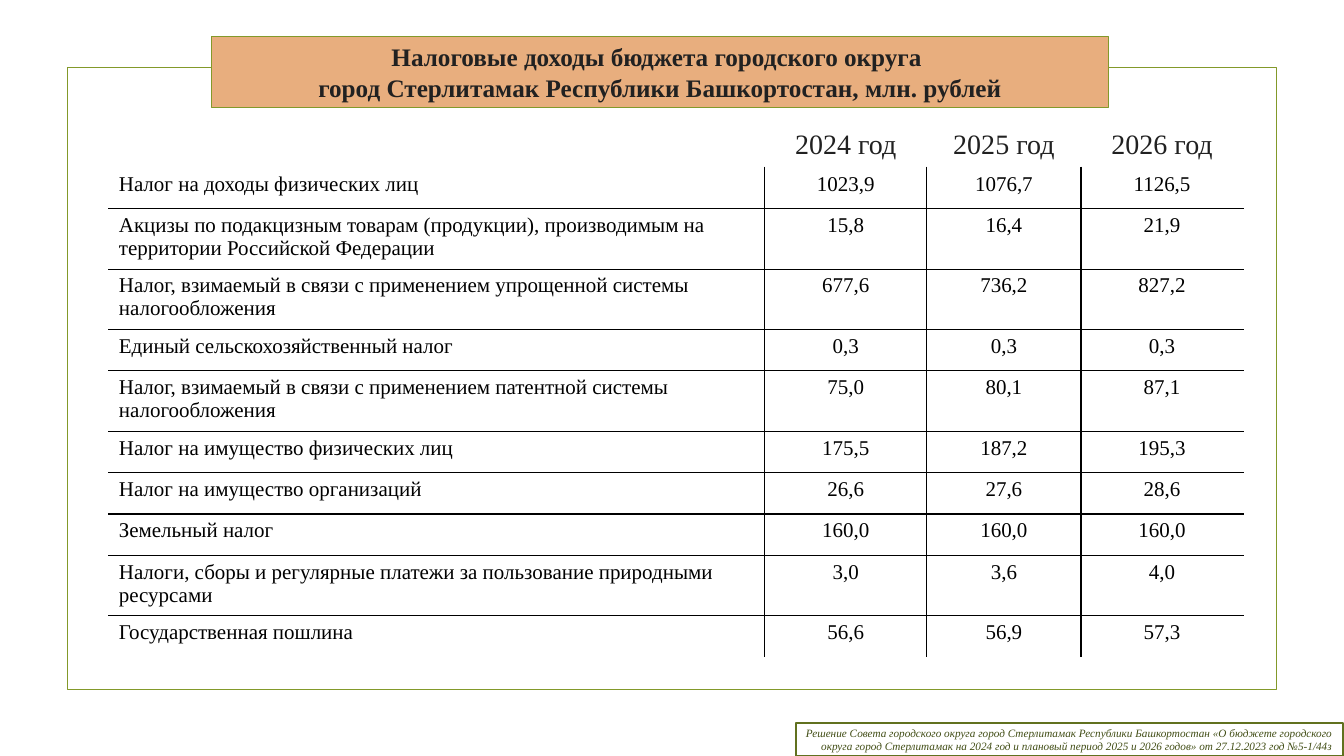
from pptx import Presentation
from pptx.dml.color import RGBColor
from pptx.enum.shapes import MSO_SHAPE as SHAPE
from pptx.enum.text import MSO_ANCHOR as ANCHOR, PP_ALIGN as ALIGN
from pptx.oxml import parse_xml
from pptx.oxml.ns import nsdecls
from pptx.util import Inches, Pt

FONT = "Times New Roman"
WHITE, BLACK, DARK, GREEN = "FFFFFF", "000000", "212121", "83992A"
TITLE = ("Налоговые доходы бюджета городского округа \v"
         "город Стерлитамак Республики Башкортостан, млн. рублей")
SOURCE = [
    "Решение Совета городского округа город Стерлитамак Республики Башкортостан «О бюджете городского ",
    "округа город Стерлитамак на 2024 год и плановый период 2025 и 2026 годов» от 27.12.2023 год №5-1/44з",
]
COL_WIDTHS = [6.51, 1.61, 1.53, 1.61]
ROW_HEIGHTS = [0.43, 0.41, 0.6, 0.6, 0.41, 0.6, 0.41, 0.41, 0.41, 0.6, 0.41]
TAXES = [
    ["", "2024 год", "2025 год", "2026 год"],
    ["Налог на доходы физических лиц", "1023,9", "1076,7", "1126,5"],
    ["Акцизы по подакцизным товарам (продукции), производимым на территории Российской Федерации",
     "15,8", "16,4", "21,9"],
    ["Налог, взимаемый в связи с применением упрощенной системы налогообложения",
     "677,6", "736,2", "827,2"],
    ["Единый сельскохозяйственный налог", "0,3", "0,3", "0,3"],
    ["Налог, взимаемый в связи с применением патентной системы налогообложения",
     "75,0", "80,1", "87,1"],
    ["Налог на имущество физических лиц", "175,5", "187,2", "195,3"],
    ["Налог на имущество организаций", "26,6", "27,6", "28,6"],
    ["Земельный налог", "160,0", "160,0", "160,0"],
    ["Налоги, сборы и регулярные платежи за пользование природными ресурсами",
     "3,0", "3,6", "4,0"],
    ["Государственная пошлина", "56,6", "56,9", "57,3"],
]


def rgb(color):
    return RGBColor.from_string(color)


def format_paragraph(p, size, color, align, bold=False, italic=False):
    p.alignment = align
    p.font.name, p.font.size = FONT, Pt(size)
    p.font.bold, p.font.italic = bold, italic
    p.font.color.rgb = rgb(color)


def set_outline(sp, color, width):
    sp.line.color.rgb = rgb(color)
    sp.line.width = Pt(width)


def add_box(slide, box, color):
    sp = slide.shapes.add_shape(SHAPE.RECTANGLE, *map(Inches, box))
    sp.shadow.inherit = False
    sp.fill.background()
    set_outline(sp, color, 1.25)
    return sp


def place_title(slide):
    sp = slide.shapes.title
    sp.left, sp.top, sp.width, sp.height = map(Inches, (2.1, 0.36, 8.9, 0.71))
    sp.fill.solid()
    sp.fill.fore_color.rgb = rgb("E8AE7E")
    set_outline(sp, GREEN, 0.75)
    tf = sp.text_frame
    tf.text = TITLE
    tf.vertical_anchor = ANCHOR.MIDDLE
    p = tf.paragraphs[0]
    p.line_spacing = 1.0
    format_paragraph(p, 18, DARK, ALIGN.CENTER, bold=True)
    slide.shapes.element.append(sp.element)


def set_borders(cell, **sides):
    tc_pr = cell._tc.get_or_add_tcPr()
    for side, color in sides.items():
        tc_pr.append(parse_xml(
            f'<a:ln{side} {nsdecls("a")} w="12700"><a:solidFill>'
            f'<a:srgbClr val="{color}"/></a:solidFill></a:ln{side}>'))


def add_tax_table(slide):
    rows, cols = len(TAXES), len(COL_WIDTHS)
    table = slide.shapes.add_table(
        rows, cols, Inches(1.08), Inches(1.23),
        Inches(sum(COL_WIDTHS)), Inches(sum(ROW_HEIGHTS))).table
    table.first_row = table.horz_banding = False
    for column, width in zip(table.columns, COL_WIDTHS):
        column.width = Inches(width)
    for r, (row, height) in enumerate(zip(table.rows, ROW_HEIGHTS)):
        row.height = Inches(height)
        for c, cell in enumerate(row.cells):
            cell.text = TAXES[r][c]
            format_paragraph(cell.text_frame.paragraphs[0], 15 if r else 20,
                             BLACK if r else DARK, ALIGN.CENTER if c else ALIGN.LEFT)
            set_borders(cell,
                        L=BLACK if r and c else WHITE,
                        R=BLACK if r and c < cols - 1 else WHITE,
                        T=BLACK if r > 1 else WHITE,
                        B=BLACK if 0 < r < rows - 1 else WHITE)
            cell.fill.solid()
            cell.fill.fore_color.rgb = rgb(WHITE)


def add_source(slide):
    tf = add_box(slide, (7.9, 7.17, 5.43, 0.33), "61711F").text_frame
    tf.word_wrap = True
    tf.vertical_anchor = ANCHOR.MIDDLE
    tf.text = "\n".join(SOURCE)
    for p in tf.paragraphs:
        format_paragraph(p, 8, "414D15", ALIGN.RIGHT, italic=True)


def main():
    """Build the slide of city tax revenues for 2024-2026."""
    prs = Presentation()
    prs.slide_width, prs.slide_height = Inches(13.34), Inches(7.5)
    slide = prs.slides.add_slide(prs.slide_layouts[5])
    add_box(slide, (0.67, 0.67, 12, 6.17), GREEN)
    place_title(slide)
    add_tax_table(slide)
    add_source(slide)
    prs.save("out.pptx")


if __name__ == "__main__":
    main()
